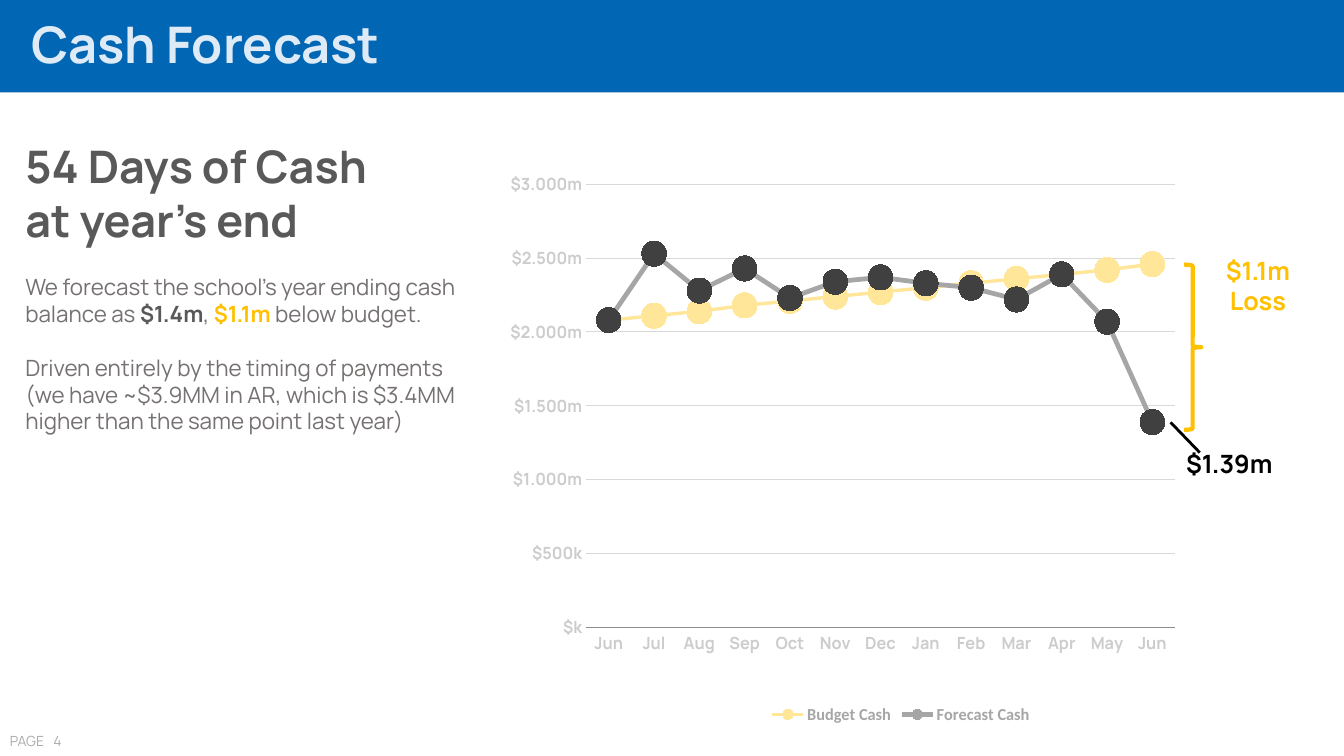
import pptx
import pptx.chart.data
import pptx.dml.color
import pptx.enum.chart
import pptx.enum.shapes
import pptx.enum.text
import pptx.oxml
import pptx.oxml.ns
import pptx.util

Pt = pptx.util.Pt
qn = pptx.oxml.ns.qn
FONT = "Manrope"
GOLD, DARK, BODY, PALE = "FFC000", "595959", "767171", "AFABAB"

deck = pptx.Presentation()
deck.slide_width = pptx.util.Inches(13.33)
deck.slide_height = pptx.util.Inches(7.5)
slide = deck.slides.add_slide(deck.slide_layouts[6])
# Grid of 100 columns by 100 rows
col, row = deck.slide_width / 100, deck.slide_height / 100


def paint(target, colour):
    """Colour a font, a line or a solid fill."""
    if hasattr(target, "solid"):
        target.solid()
        target = target.fore_color
    else:
        target = target.color
    target.rgb = pptx.dml.color.RGBColor.from_string(colour)


def write(x, y, w, h, paragraphs, align=None, wrap=True):
    """Each paragraph is (space before, runs); a run is (text, size, colour, bold)."""
    box = slide.shapes.add_textbox(int(x * col), int(y * row), int(w * col), int(h * row))
    box.text_frame.word_wrap = wrap
    for i, (gap, runs) in enumerate(paragraphs):
        para = box.text_frame.paragraphs[0] if i == 0 else box.text_frame.add_paragraph()
        para.alignment = align
        if gap:
            para.space_before = Pt(gap)
        for text, size, colour, bold in runs:
            run = para.add_run()
            run.text = text
            run.font.name, run.font.size, run.font.bold = FONT, Pt(size), bold
            paint(run.font, colour)


# Header band and page number
band = slide.shapes.add_shape(pptx.enum.shapes.MSO_SHAPE.RECTANGLE,
                              0, 0, deck.slide_width, int(12.22 * row))
band.shadow.inherit = False
paint(band.fill, "0166B3")
band.line.fill.background()
write(0, 96.27, 4.28, 3.6, [(0, [("PAGE", 10, PALE, False)])], wrap=False)
write(3.23, 96.27, 3.23, 3.6, [(0, [("4", 10, PALE, False)])])
write(1.58, 1.07, 98, 9.47, [(0, [("Cash Forecast", 36, "DEEBF7", True)])])

# Cash chart
months = "Jun Jul Aug Sep Oct Nov Dec Jan Feb Mar Apr May Jun".split()
budget = [2.08, 2.11, 2.14, 2.18, 2.21, 2.24, 2.27, 2.30, 2.33, 2.36, 2.39, 2.42, 2.46]
forecast = [2.08, 2.53, 2.28, 2.43, 2.23, 2.34, 2.37, 2.33, 2.30, 2.22, 2.39, 2.07, 1.39]
cash = pptx.chart.data.CategoryChartData()
cash.categories = months
for name, millions in (("Budget Cash", budget), ("Forecast Cash", forecast)):
    cash.add_series(name, [round(m * 1_000_000) for m in millions])
chart = slide.shapes.add_chart(pptx.enum.chart.XL_CHART_TYPE.LINE_MARKERS,
                               int(37.73 * col), int(20.75 * row),
                               int(52.51 * col), int(77.33 * row), cash).chart
chart.has_title = False
chart.font.name, chart.font.size = "Calibri", Pt(10)
chart.plots[0].vary_by_categories = False

styles = (("FFE699", 2.5, 18, "FFE699"), ("A6A6A6", 3.5, 20, "404040"))
for series, (colour, width, size, dot) in zip(chart.plots[0].series, styles):
    series.smooth = False
    paint(series.format.line, colour)
    series.format.line.width = Pt(width)
    series.marker.style = pptx.enum.chart.XL_MARKER_STYLE.CIRCLE
    series.marker.size = size
    paint(series.marker.format.fill, colour)
    series.marker.format.line.fill.background()
    if dot == colour:
        continue
    for i in range(len(months)):
        point = series.points[i]
        point.marker.style = pptx.enum.chart.XL_MARKER_STYLE.CIRCLE
        point.marker.size = 18
        paint(point.marker.format.fill, dot)
        point.marker.format.line.fill.background()
        paint(point.format.line, dot)
        point.format.line.width = Pt(width)

# Forecast ranks first, though its line lies over the budget
for series_xml, rank in zip(chart._chartSpace.findall(".//" + qn("c:ser")), "10"):
    series_xml.find(qn("c:order")).set("val", rank)

# Axes and legend
month_axis, cash_axis = chart.category_axis, chart.value_axis
for axis in (month_axis, cash_axis):
    axis.major_tick_mark = axis.minor_tick_mark = pptx.enum.chart.XL_TICK_MARK.NONE
    labels = axis.tick_labels.font
    labels.name, labels.size, labels.bold = FONT, Pt(12), True
    paint(labels, "CCCCCC")
paint(month_axis.format.line, "8C8C8C")
month_axis.format.line.width = Pt(0.75)
cash_axis.format.line.fill.background()
cash_axis.has_major_gridlines = True
paint(cash_axis.major_gridlines.format.line, "D9D9D9")
cash_axis.major_gridlines.format.line.width = Pt(0.75)
cash_axis.tick_labels.number_format = '[>999999]\\ "$"#.##0,,"m";"$"#,"k"'
cash_axis.tick_labels.number_format_is_linked = False

ns = pptx.oxml.ns.nsdecls("c")
value_xml = chart._chartSpace.find(".//" + qn("c:valAx"))
if value_xml.find(qn("c:crossBetween")) is None:
    value_xml.find(qn("c:crosses")).addnext(
        pptx.oxml.parse_xml(f'<c:crossBetween {ns} val="between"/>'))
cash_axis.minimum_scale, cash_axis.maximum_scale = 0, 3_000_000
cash_axis.major_unit = 500_000

chart.has_legend = True
chart.legend.position = pptx.enum.chart.XL_LEGEND_POSITION.BOTTOM
chart.legend.include_in_layout = False
chart.legend.font.name, chart.legend.font.size = "Calibri", Pt(12)
chart.legend.font.bold = True
paint(chart.legend.font, "A6A6A6")

# Places of plot area and legend as shares of the chart
plot_xml = chart._chartSpace.find(".//" + qn("c:plotArea"))
legend_xml = chart._chartSpace.find(".//" + qn("c:legend"))
places = (
    (plot_xml, 0, '<c:layoutTarget val="inner"/>',
     {"x": 0.086, "y": 0.047, "w": 0.859, "h": 0.758}),
    (legend_xml, 1, "", {"x": 0.35, "y": 0.93}),
)
for part, index, target, shares in places:
    for layout in part.findall(qn("c:layout")):
        part.remove(layout)
    values = "".join(f'<c:{tag} val="{share}"/>' for tag, share in shares.items())
    part.insert(index, pptx.oxml.parse_xml(
        f'<c:layout {ns}><c:manualLayout>{target}<c:xMode val="edge"/>'
        f'<c:yMode val="edge"/>{values}</c:manualLayout></c:layout>'))

# Loss bracket and its label
centre = pptx.enum.text.PP_ALIGN.CENTER
brace = slide.shapes.add_shape(pptx.enum.shapes.MSO_SHAPE.RIGHT_BRACE,
                               int(88.1 * col), int(35 * row),
                               int(1.28 * col), int(21.87 * row))
brace.shadow.inherit = False
brace.fill.background()
paint(brace.line, GOLD)
brace.line.width = Pt(3)
write(89.7, 33.1, 7.8, 9.47, [(0, [("$1.1m Loss", 18, GOLD, True)])], centre)

# Message on the left
write(1.15, 17.67, 33.53, 48, [
    (0, [("54 Days of Cash", 32, DARK, True)]),
    (0, [("at year’s end", 32, DARK, True)]),
    (19.3, [("We forecast the school’s year ending cash balance as ", 16, BODY, False),
            ("$1.4m", 16, DARK, True),
            (", ", 16, BODY, False),
            ("$1.1m", 16, GOLD, True),
            (" below budget.", 16, BODY, False)]),
    (19.3, [("Driven entirely by the timing of payments (we have ~$3.9MM in AR, "
             "which is $3.4MM higher than the same point last year)", 16, BODY, False)]),
])

# Year-end callout
write(86.25, 58.67, 10.43, 5.33, [(0, [("$1.39m", 18, "000000", True)])], centre)
leader = slide.shapes.add_connector(pptx.enum.shapes.MSO_CONNECTOR.STRAIGHT,
                                    int(87.1 * col), int(55.87 * row),
                                    int(89.27 * col), int(59.87 * row))
paint(leader.line, "000000")
leader.line.width = Pt(2)
leader._element.spPr.append(
    pptx.oxml.parse_xml(f'<a:effectLst {pptx.oxml.ns.nsdecls("a")}/>'))

deck.save("out.pptx")
